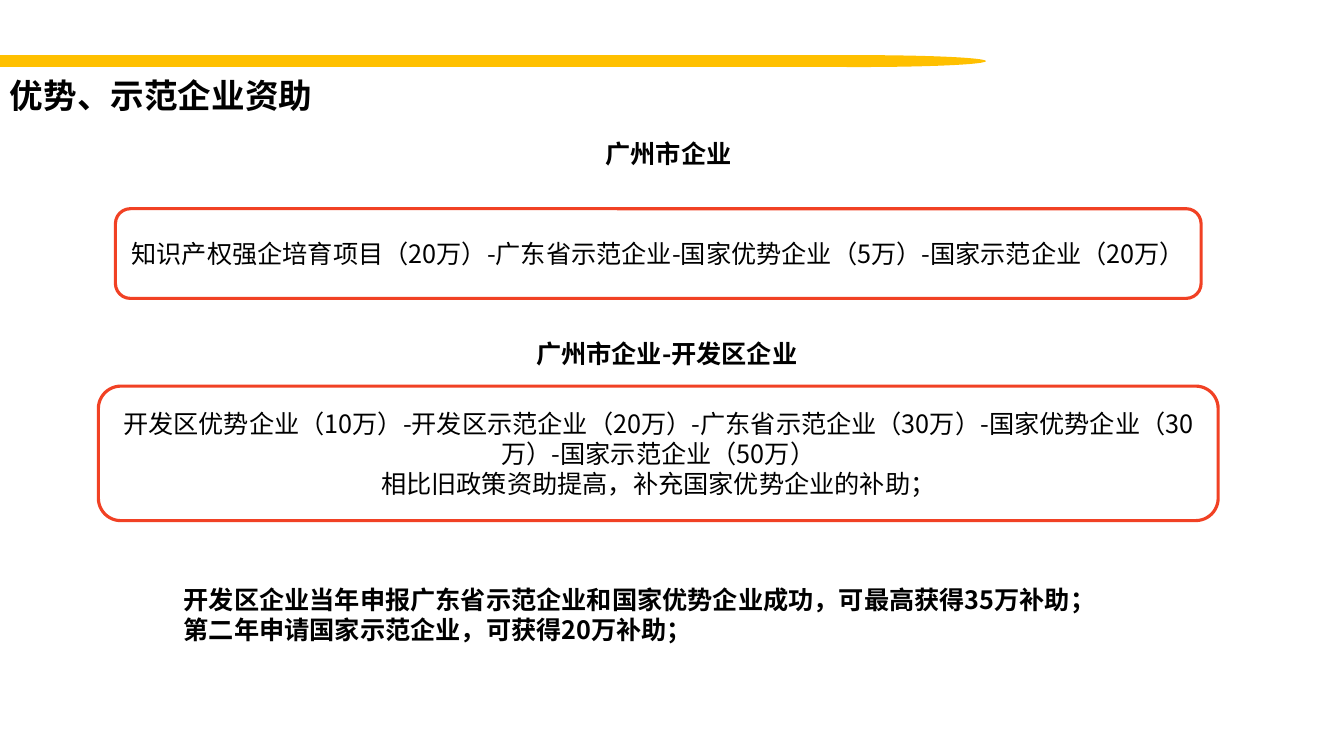
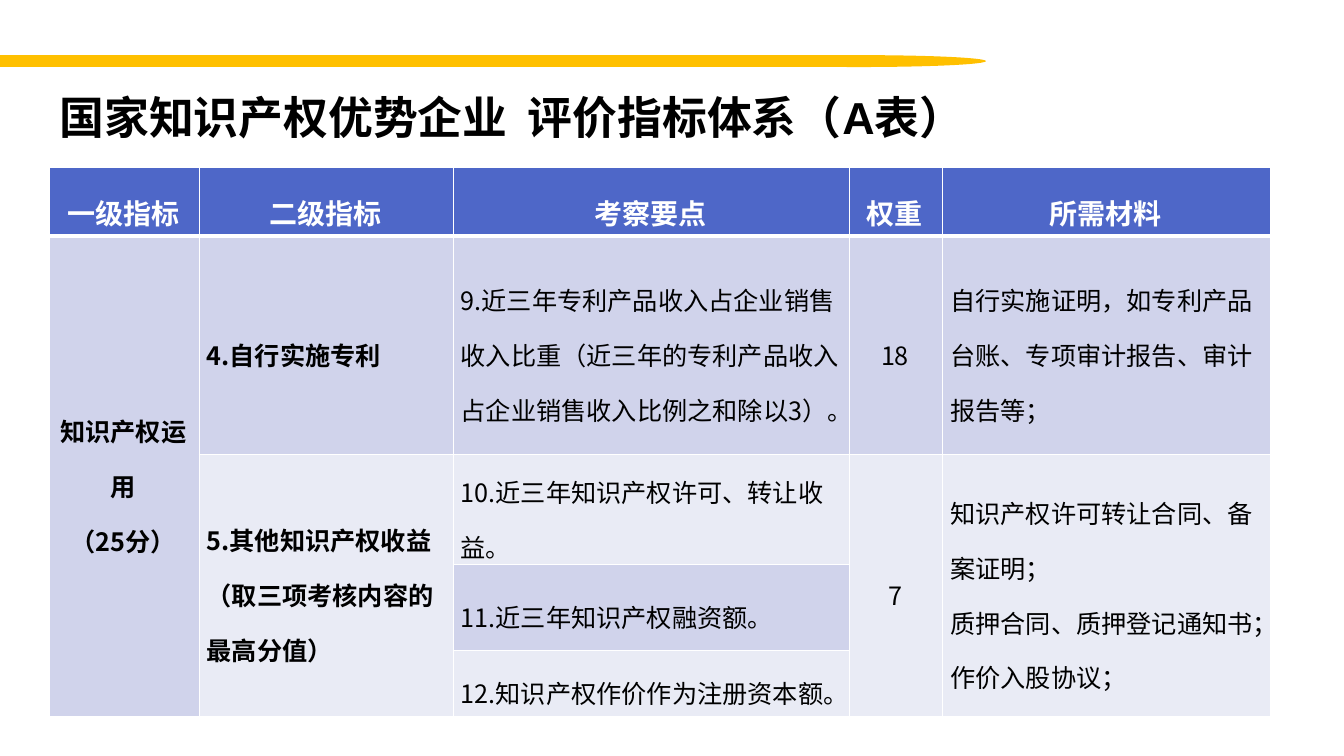
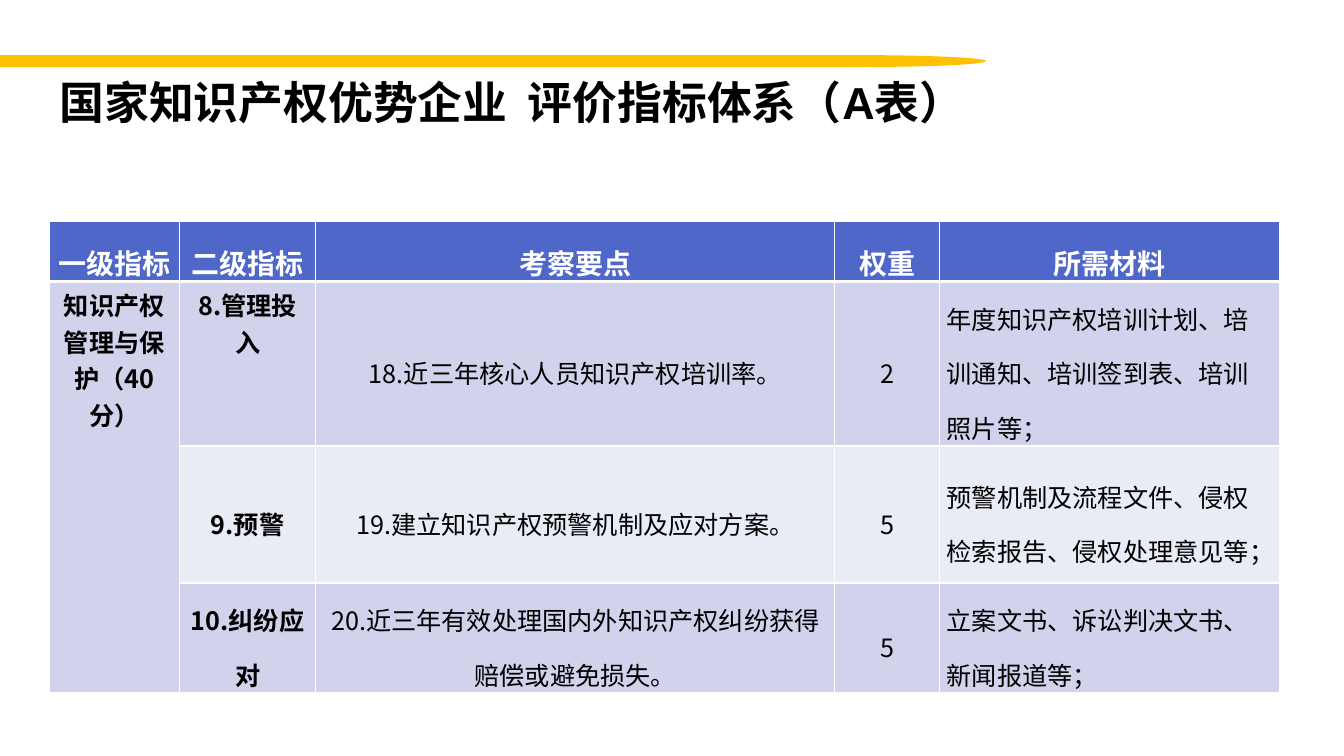
"""Build three slides on enterprise intellectual property subsidies and evaluation criteria."""
import itertools

import lxml.etree
import pptx
import pptx.dml.color
import pptx.enum.shapes
import pptx.enum.text
import pptx.oxml.ns
import pptx.util

Cm = pptx.util.Cm
Pt = pptx.util.Pt
RGBColor = pptx.dml.color.RGBColor
Shape = pptx.enum.shapes.MSO_SHAPE
Align = pptx.enum.text.PP_ALIGN
Anchor = pptx.enum.text.MSO_ANCHOR
qn = pptx.oxml.ns.qn

WHITE = RGBColor(0xFF, 0xFF, 0xFF)
BLACK = RGBColor(0x00, 0x00, 0x00)
GOLD = RGBColor(0xFF, 0xC0, 0x00)
RED = RGBColor(0xF1, 0x41, 0x24)
HEADER_BLUE = RGBColor(0x4E, 0x67, 0xC8)
BAND_DARK = RGBColor(0xD0, 0xD3, 0xEB)
BAND_LIGHT = RGBColor(0xE9, 0xEB, 0xF5)
CJK_FONT = "Noto Sans CJK SC"


def write(frame, text, size=18, color=BLACK, bold=False, align=Align.LEFT,
          spacing=None, font=CJK_FONT):
    """Fill a text frame, one paragraph per line of text."""
    frame.word_wrap = True
    for number, line in enumerate(text.split("\n")):
        para = frame.add_paragraph() if number else frame.paragraphs[0]
        para.alignment = align
        para.line_spacing = spacing
        span = para.add_run()
        span.text = line
        span.font.size = Pt(size)
        span.font.bold = bold
        span.font.color.rgb = color
        span.font.name = font
        latin = span._r.get_or_add_rPr().find(qn("a:latin"))
        latin.addnext(lxml.etree.Element(qn("a:ea"), typeface=CJK_FONT))


def add_border(cell, side, width):
    """Draw one white border of a table cell."""
    line = lxml.etree.SubElement(cell._tc.get_or_add_tcPr(), qn(f"a:ln{side}"), w=str(Pt(width)))
    fill = lxml.etree.SubElement(line, qn("a:solidFill"))
    lxml.etree.SubElement(fill, qn("a:srgbClr"), val=str(WHITE))


deck = pptx.Presentation()
deck.slide_width = Cm(33.87)
deck.slide_height = Cm(19.05)
blank = deck.slide_layouts[6]

page = deck.slides.add_slide(blank)

for kind, left, width in ((Shape.RECTANGLE, 0, 21.08), (Shape.OVAL, 18.44, 6.41)):
    band = page.shapes.add_shape(kind, Cm(left), Cm(1.39), Cm(width), Cm(0.3))
    band.shadow.inherit = False
    band.fill.solid()
    band.fill.fore_color.rgb = GOLD
    band.line.fill.background()
    blank.shapes.element.append(band.element)

subsidy_texts = (
    (0, 1.77, 13.89, 1.27, 24, "优势、示范企业资助"),
    (15.01, 3.36, 8.89, 1.02, 18, "广州市企业"),
    (13.26, 8.41, 8.89, 1.02, 18, "广州市企业-开发区企业"),
    (4.38, 14.59, 26.31, 1.8, 18,
     "开发区企业当年申报广东省示范企业和国家优势企业成功，可最高获得35万补助；\n"
     "第二年申请国家示范企业，可获得20万补助；"),
)
for left, top, width, height, size, text in subsidy_texts:
    box = page.shapes.add_textbox(Cm(left), Cm(top), Cm(width), Cm(height))
    write(box.text_frame, text, size=size, bold=True)

subsidy_paths = (
    (2.91, 5.26, 27.36, 2.26,
     "知识产权强企培育项目（20万）-广东省示范企业-国家优势企业（5万）-国家示范企业（20万）"),
    (2.48, 9.73, 28.22, 3.39,
     "开发区优势企业（10万）-开发区示范企业（20万）-广东省示范企业（30万）"
     "-国家优势企业（30万）-国家示范企业（50万）\n"
     "相比旧政策资助提高，补充国家优势企业的补助；"),
)
for left, top, width, height, text in subsidy_paths:
    box = page.shapes.add_shape(Shape.ROUNDED_RECTANGLE, Cm(left), Cm(top), Cm(width), Cm(height))
    box.shadow.inherit = False
    box.fill.solid()
    box.fill.fore_color.rgb = WHITE
    box.line.color.rgb = RED
    box.line.width = Pt(2.25)
    box.text_frame.vertical_anchor = Anchor.MIDDLE
    write(box.text_frame, text, align=Align.CENTER)

headings = ("一级指标", "二级指标", "考察要点", "权重", "所需材料")
criteria_pages = (
    dict(
        title_top=1.18, table_top=4.22, right_margin=0.24, centred={0, 3}, compact=set(),
        widths=(3.78, 6.4, 9.98, 2.36, 8.26),
        heights=(1.73, 5.51, 2.76, 2.18, 1.65),
        rows=(
            headings,
            ("知识产权运用\n（25分）", "4.自行实施专利",
             "9.近三年专利产品收入占企业销售收入比重（近三年的专利产品收入占企业销售收入比例之和除以3）。",
             "18", "自行实施证明，如专利产品台账、专项审计报告、审计报告等；"),
            (None, "5.其他知识产权收益（取三项考核内容的最高分值）",
             "10.近三年知识产权许可、转让收益。", "7",
             "知识产权许可转让合同、备案证明；\n质押合同、质押登记通知书；\n作价入股协议；"),
            (None, None, "11.近三年知识产权融资额。", None, None),
            (None, None, "12.知识产权作价作为注册资本额。", None, None),
        ),
    ),
    dict(
        title_top=0.81, table_top=5.59, right_margin=0.19, centred={0, 1, 2, 3},
        compact={(1, 0), (1, 1)},
        widths=(3.28, 3.44, 13.08, 2.63, 8.57),
        heights=(1.5, 4.15, 3.45, 2.75),
        rows=(
            headings,
            ("知识产权管理与保护（40分）", "8.管理投入", "18.近三年核心人员知识产权培训率。",
             "2", "年度知识产权培训计划、培训通知、培训签到表、培训照片等；"),
            (None, "9.预警", "19.建立知识产权预警机制及应对方案。",
             "5", "预警机制及流程文件、侵权检索报告、侵权处理意见等；"),
            (None, "10.纠纷应对", "20.近三年有效处理国内外知识产权纠纷获得赔偿或避免损失。",
             "5", "立案文书、诉讼判决文书、新闻报道等；"),
        ),
    ),
)

for criteria in criteria_pages:
    page = deck.slides.add_slide(blank)
    rows, widths, heights = criteria["rows"], criteria["widths"], criteria["heights"]
    table = page.shapes.add_table(
        len(rows), len(widths), Cm(1.24), Cm(criteria["table_top"]),
        Cm(sum(widths)), Cm(sum(heights))).table
    for column, width in zip(table.columns, widths):
        column.width = Cm(width)
    for row, height in zip(table.rows, heights):
        row.height = Cm(height)

    for r, c in itertools.product(range(len(rows)), range(len(widths))):
        cell = table.cell(r, c)
        header = r == 0
        for side in "LRTB":
            thick = (r, side) in ((0, "B"), (1, "T"))
            add_border(cell, side, 3 if thick else 1)
        cell.fill.solid()
        cell.fill.fore_color.rgb = HEADER_BLUE if header else BAND_DARK if r % 2 else BAND_LIGHT
        if rows[r][c] is None:
            continue
        covered = list(itertools.takewhile(lambda lower: lower[c] is None, rows[r + 1:]))
        if covered:
            cell.merge(table.cell(r + len(covered), c))
        compact = (r, c) in criteria["compact"]
        if not compact:
            cell.margin_left = Cm(0.19)
            cell.margin_right = Cm(criteria["right_margin"])
            cell.margin_top = cell.margin_bottom = 0
            cell.vertical_anchor = Anchor.MIDDLE
        write(cell.text_frame, rows[r][c],
              size=20 if header else 18,
              color=WHITE if header else BLACK,
              bold=header or c < 2,
              align=Align.CENTER if header or c in criteria["centred"] else Align.LEFT,
              spacing=None if compact else 1.5)

    box = page.shapes.add_textbox(Cm(1.25), Cm(criteria["title_top"]), Cm(29.21), Cm(3.68))
    box.text_frame.vertical_anchor = Anchor.MIDDLE
    write(box.text_frame, "国家知识产权优势企业  评价指标体系（A表）", size=32, bold=True,
          spacing=0.9, font="Arial")

deck.save("out.pptx")
